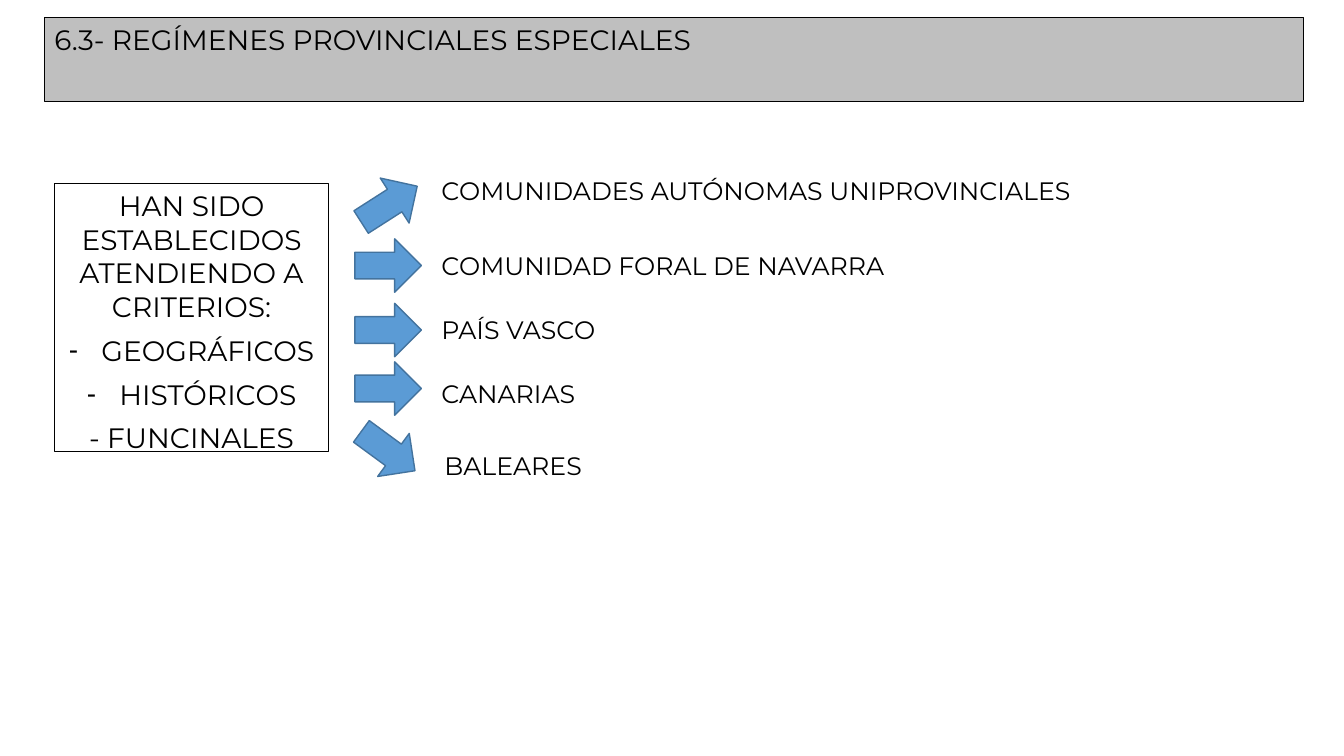
from dataclasses import dataclass

from lxml import etree
from pptx import Presentation
from pptx.dml.color import RGBColor
from pptx.enum import shapes, text
from pptx.oxml import ns
from pptx.util import Inches, Pt

FONT = "Montserrat"
BLACK, GREY, BLUE, DARK_BLUE = "000000", "BFBFBF", "5B9BD5", "43739E"
HANGING = Inches(0.25)


@dataclass(frozen=True)
class Regime:
    name: str
    left: float
    top: float
    arrow_left: float
    arrow_top: float
    rotation: float = 0


@dataclass(frozen=True)
class Criterion:
    wording: str
    space_before: float
    bulleted: bool = False


REGIMES = [
    Regime("COMUNIDADES AUTÓNOMAS UNIPROVINCIALES", 4.28, 1.69, 3.53, 1.76, 327.4),
    Regime("COMUNIDAD FORAL DE NAVARRA", 4.28, 2.43, 3.52, 2.37),
    Regime("PAÍS VASCO", 4.28, 3.07, 3.52, 3.01),
    Regime("CANARIAS", 4.28, 3.7, 3.52, 3.59),
    Regime("BALEARES", 4.31, 4.42, 3.52, 4.21, 36.3),
]
CRITERIA = [
    Criterion("HAN SIDO ESTABLECIDOS ATENDIENDO A CRITERIOS:", 0),
    Criterion(" GEOGRÁFICOS", 7.3, True),
    Criterion(" HISTÓRICOS", 7.3, True),
    Criterion("- FUNCINALES", 7.3),
]


def color(hex_code: str) -> RGBColor:
    return RGBColor.from_string(hex_code)


def place(shape, left: float, top: float, width: float, height: float) -> None:
    shape.left, shape.top = Inches(left), Inches(top)
    shape.width, shape.height = Inches(width), Inches(height)


def outline(shape, hex_code: str, points: float) -> None:
    shape.line.color.rgb = color(hex_code)
    shape.line.width = Pt(points)


def prepare_frame(shape):
    frame = shape.text_frame
    frame.word_wrap = True
    frame.auto_size = text.MSO_AUTO_SIZE.SHAPE_TO_FIT_TEXT
    frame.vertical_anchor = text.MSO_ANCHOR.TOP
    return frame


def write(paragraph, wording: str, size: float, align, before: float = 0) -> None:
    paragraph.alignment = align
    paragraph.line_spacing = 1.0
    paragraph.space_before = Pt(before)
    run = paragraph.add_run()
    run.text = wording
    run.font.name, run.font.size = FONT, Pt(size)
    run.font.color.rgb = color(BLACK)


def set_bullet(paragraph, bulleted: bool) -> None:
    """Give the paragraph a hanging dash, or clear the inherited bullet."""
    properties = paragraph._p.get_or_add_pPr()
    indent = HANGING if bulleted else 0
    properties.set("marL", str(indent))
    properties.set("indent", str(-indent))
    if bulleted:
        etree.SubElement(properties, ns.qn("a:buFontTx"))
        etree.SubElement(properties, ns.qn("a:buChar")).set("char", "-")
    else:
        etree.SubElement(properties, ns.qn("a:buNone"))


def add_heading(slide) -> None:
    heading = slide.shapes.title
    place(heading, 0.44, 0.17, 12.49, 0.44)
    heading.fill.solid()
    heading.fill.fore_color.rgb = color(GREY)
    outline(heading, BLACK, 0.75)
    write(prepare_frame(heading).paragraphs[0],
          "6.3- REGÍMENES PROVINCIALES ESPECIALES", 20, text.PP_ALIGN.LEFT)


def add_criteria(slide) -> None:
    criteria_box = slide.placeholders[1]
    place(criteria_box, 0.54, 1.82, 2.72, 2.76)
    outline(criteria_box, BLACK, 0.75)
    frame = prepare_frame(criteria_box)
    for index, criterion in enumerate(CRITERIA):
        paragraph = frame.add_paragraph() if index else frame.paragraphs[0]
        write(paragraph, criterion.wording, 20, text.PP_ALIGN.CENTER,
              criterion.space_before)
        set_bullet(paragraph, criterion.bulleted)


def add_regime(slide, regime: Regime) -> None:
    arrow = slide.shapes.add_shape(
        shapes.MSO_SHAPE.RIGHT_ARROW, Inches(regime.arrow_left),
        Inches(regime.arrow_top), Inches(0.66), Inches(0.53))
    arrow.rotation = regime.rotation
    arrow.shadow.inherit = False
    arrow.fill.solid()
    arrow.fill.fore_color.rgb = color(BLUE)
    outline(arrow, DARK_BLUE, 1)

    label = slide.shapes.add_textbox(
        Inches(regime.left), Inches(regime.top), Inches(8.8), Inches(0.4))
    write(prepare_frame(label).paragraphs[0], regime.name, 18, text.PP_ALIGN.LEFT)


def main() -> None:
    presentation = Presentation()
    presentation.slide_width = Inches(13.33)
    presentation.slide_height = Inches(7.5)
    slide = presentation.slides.add_slide(presentation.slide_layouts[1])
    add_heading(slide)
    add_criteria(slide)
    for regime in REGIMES:
        add_regime(slide, regime)
    presentation.save("out.pptx")


if __name__ == "__main__":
    main()
